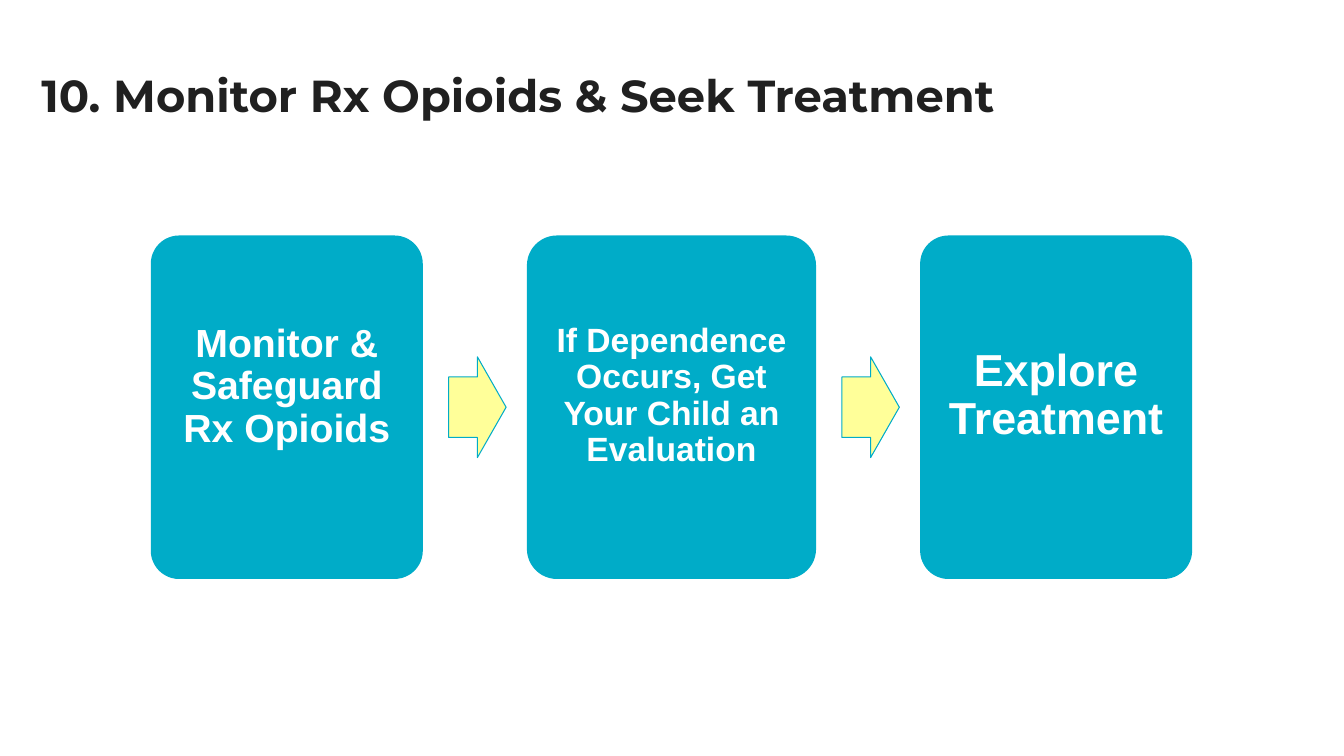
from pptx import Presentation
from pptx.dml.color import RGBColor
from pptx.enum import shapes, text
from pptx.util import Inches, Pt

TEAL = RGBColor(0x00, 0xAC, 0xC8)
YELLOW = RGBColor(0xFF, 0xFF, 0x99)
WHITE = RGBColor(0xFF, 0xFF, 0xFF)
INK = RGBColor(0x20, 0x20, 0x20)

TITLE = "10. Monitor Rx Opioids & Seek Treatment"
# paragraphs, font size, card width, bottom inset
STEPS = [
    (["Monitor & Safeguard", "Rx Opioids"], 28, 2.67, 0.5),
    (["If Dependence Occurs, Get Your Child an Evaluation"], 24, 2.84, 0.32),
    (["Explore Treatment"], 32, 2.67, 0.32),
]

SLIDE_W, SLIDE_H = 13.33, 7.5
CARD_LEFT, CARD_TOP, CARD_H, CARD_GAP = 1.51, 2.35, 3.38, 1.06
ARROW_W, ARROW_H, ARROW_OFFSET = 0.57, 1, 0.27
INSET = 0.1


def add_filled(slide, kind, box, adjustments, fill, line_width):
    shape = slide.shapes.add_shape(kind, *map(Inches, box))
    for i, value in enumerate(adjustments):
        shape.adjustments[i] = value
    shape.shadow.inherit = False
    shape.fill.solid()
    shape.fill.fore_color.rgb = fill
    shape.line.color.rgb = TEAL
    shape.line.width = Pt(line_width)
    return shape


def style(paragraph, face, size, color):
    font = paragraph.font
    font.name, font.size, font.bold = face, Pt(size), True
    font.color.rgb = color


def write_step(card, lines, size, bottom):
    frame = card.text_frame
    frame.word_wrap = True
    frame.vertical_anchor = text.MSO_ANCHOR.MIDDLE
    frame.margin_left = frame.margin_right = frame.margin_top = Inches(INSET)
    frame.margin_bottom = Inches(bottom)
    frame.text = "\n".join(lines)
    for paragraph in frame.paragraphs:
        paragraph.alignment = text.PP_ALIGN.CENTER
        paragraph.line_spacing = 0.9
        style(paragraph, "Arial", size, WHITE)


def main():
    prs = Presentation()
    prs.slide_width, prs.slide_height = Inches(SLIDE_W), Inches(SLIDE_H)
    slide = prs.slides.add_slide(prs.slide_layouts[5])

    title = slide.shapes.title
    title.left, title.top, title.width, title.height = map(
        Inches, (0.28, 0.28, 12.57, 1))
    frame = title.text_frame
    frame.text = TITLE
    frame.word_wrap = True
    frame.vertical_anchor = text.MSO_ANCHOR.BOTTOM
    frame.margin_left = frame.margin_right = Inches(0.13)
    frame.margin_top = frame.margin_bottom = Inches(0.07)
    frame.paragraphs[0].alignment = text.PP_ALIGN.LEFT
    style(frame.paragraphs[0], "Montserrat", 32, INK)

    left = CARD_LEFT
    arrow_top = CARD_TOP + (CARD_H - ARROW_H) / 2
    for number, (lines, size, width, bottom) in enumerate(STEPS, 1):
        card = add_filled(slide, shapes.MSO_SHAPE.ROUNDED_RECTANGLE,
                          (left, CARD_TOP, width, CARD_H), [0.1], TEAL, 2)
        write_step(card, lines, size, bottom)
        if number < len(STEPS):
            add_filled(slide, shapes.MSO_SHAPE.RIGHT_ARROW,
                       (left + width + ARROW_OFFSET, arrow_top, ARROW_W, ARROW_H),
                       [0.6, 0.5], YELLOW, 0.75)
        left += width + CARD_GAP

    prs.save("out.pptx")


if __name__ == "__main__":
    main()
